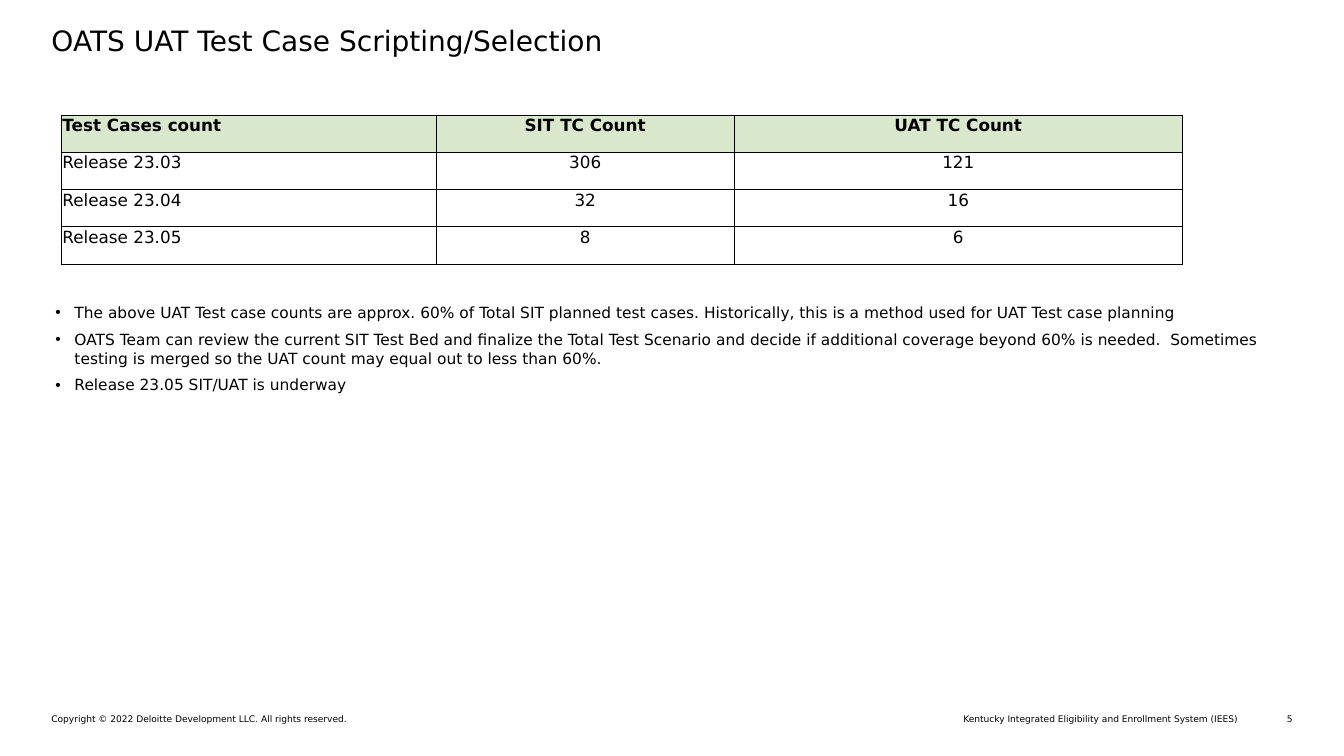
from lxml import etree
from pptx import Presentation
from pptx.dml.color import RGBColor
from pptx.enum.text import PP_ALIGN
from pptx.oxml.ns import qn
from pptx.util import Inches, Pt

LEFT, CENTER, RIGHT = PP_ALIGN.LEFT, PP_ALIGN.CENTER, PP_ALIGN.RIGHT
FONT = "DejaVu Sans"
COLORS = {"text": "000000", "border": "000000", "header": "D9E7CD"}

TITLE = "OATS UAT Test Case Scripting/Selection"
TEST_CASES = [
    ("Test Cases count", "SIT TC Count", "UAT TC Count"),
    ("Release 23.03", "306", "121"),
    ("Release 23.04", "32", "16"),
    ("Release 23.05", "8", "6"),
]
NOTES = [
    "The above UAT Test case counts are approx. 60% of Total SIT planned test cases. "
    "Historically, this is a method used for UAT Test case planning",
    "OATS Team can review the current SIT Test Bed and finalize the Total Test Scenario "
    "and decide if additional coverage beyond 60% is needed.  Sometimes testing is merged "
    "so the UAT count may equal out to less than 60%.",
    "Release 23.05 SIT/UAT is underway",
]
# text, left, width, alignment
FOOTERS = [
    ("Copyright © 2022 Deloitte Development LLC. All rights reserved.", 0.51, 5.86, LEFT),
    ("Kentucky Integrated Eligibility and Enrollment System (IEES)", 6.93, 5.35, RIGHT),
    ("5", 12.48, 0.34, RIGHT),
]
FOOTER_TOP, FOOTER_HEIGHT = 7.08, 0.11
COLUMN_WIDTHS = [3.72, 2.95, 4.45]
ROW_HEIGHT = 0.37
TABLE_LEFT, TABLE_TOP = 0.61, 1.14
BORDER_WIDTH = 0.5
BULLET_INDENT = 0.19


def style_paragraph(para, size, align=LEFT, bold=False):
    para.alignment = align
    para.font.name = FONT
    para.font.size = Pt(size)
    para.font.bold = bold
    para.font.color.rgb = RGBColor.from_string(COLORS["text"])


def add_frame(page, left, top, width, height, margins=(0, 0)):
    """Add a wrapping text box; margins are (horizontal, vertical) inches."""
    box = page.shapes.add_textbox(Inches(left), Inches(top), Inches(width), Inches(height))
    frame = box.text_frame
    frame.word_wrap = True
    frame.margin_left = frame.margin_right = Inches(margins[0])
    frame.margin_top = frame.margin_bottom = Inches(margins[1])
    return frame


def add_line(page, text, left, top, width, height, size, align=LEFT):
    para = add_frame(page, left, top, width, height).paragraphs[0]
    para.text = text
    style_paragraph(para, size, align)


def add_bullet(para):
    props = para._p.get_or_add_pPr()
    props.set("marL", str(Inches(BULLET_INDENT)))
    props.set("indent", str(-Inches(BULLET_INDENT)))
    etree.SubElement(props, qn("a:buFont"), typeface="Arial")
    etree.SubElement(props, qn("a:buChar"), char="•")


def add_borders(cell):
    """Draw all four cell edges; call before the fill is set."""
    props = cell._tc.get_or_add_tcPr()
    for edge in ("a:lnL", "a:lnR", "a:lnT", "a:lnB"):
        line = etree.SubElement(props, qn(edge), w=str(Pt(BORDER_WIDTH)))
        fill = etree.SubElement(line, qn("a:solidFill"))
        etree.SubElement(fill, qn("a:srgbClr"), val=COLORS["border"])


def fill_cell(cell, text, is_header, align):
    add_borders(cell)
    if is_header:
        cell.fill.solid()
        cell.fill.fore_color.rgb = RGBColor.from_string(COLORS["header"])
    else:
        cell.fill.background()
    cell.margin_left = cell.margin_right = cell.margin_top = Inches(0.01)
    cell.margin_bottom = 0
    para = cell.text_frame.paragraphs[0]
    para.text = text
    style_paragraph(para, 12, align, bold=is_header)


def add_test_case_table(page):
    table = page.shapes.add_table(
        len(TEST_CASES), len(COLUMN_WIDTHS), Inches(TABLE_LEFT), Inches(TABLE_TOP),
        Inches(sum(COLUMN_WIDTHS)), Inches(ROW_HEIGHT * len(TEST_CASES))).table
    table.horz_banding = False
    for column, width in zip(table.columns, COLUMN_WIDTHS):
        column.width = Inches(width)
    for row_index, values in enumerate(TEST_CASES):
        table.rows[row_index].height = Inches(ROW_HEIGHT)
        for column_index, value in enumerate(values):
            fill_cell(table.cell(row_index, column_index), value,
                      row_index == 0, CENTER if column_index else LEFT)


def add_notes(page):
    frame = add_frame(page, 0.45, 2.96, 12.31, 1.06, margins=(0.1, 0.05))
    for index, note in enumerate(NOTES):
        para = frame.add_paragraph() if index else frame.paragraphs[0]
        para.text = note
        add_bullet(para)
        para.space_after = Pt(6)
        style_paragraph(para, 11)


def main():
    deck = Presentation()
    deck.slide_width, deck.slide_height = Inches(13.33), Inches(7.5)
    page = deck.slides.add_slide(deck.slide_layouts[6])
    add_line(page, TITLE, 0.51, 0.23, 12.31, 0.37, 20)
    add_test_case_table(page)
    add_notes(page)
    for text, left, width, align in FOOTERS:
        add_line(page, text, left, FOOTER_TOP, width, FOOTER_HEIGHT, 6.5, align)
    deck.save("out.pptx")


if __name__ == "__main__":
    main()
